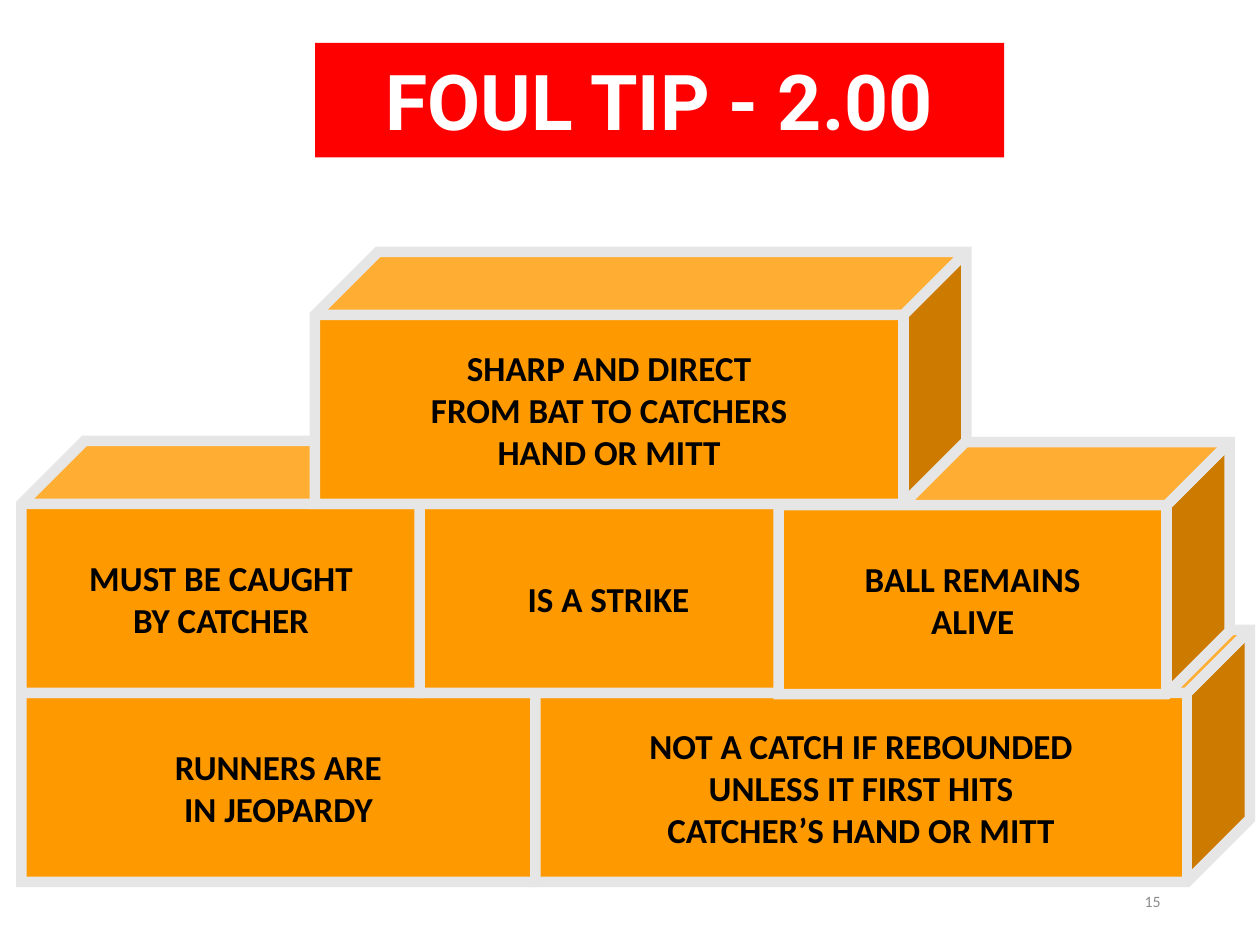
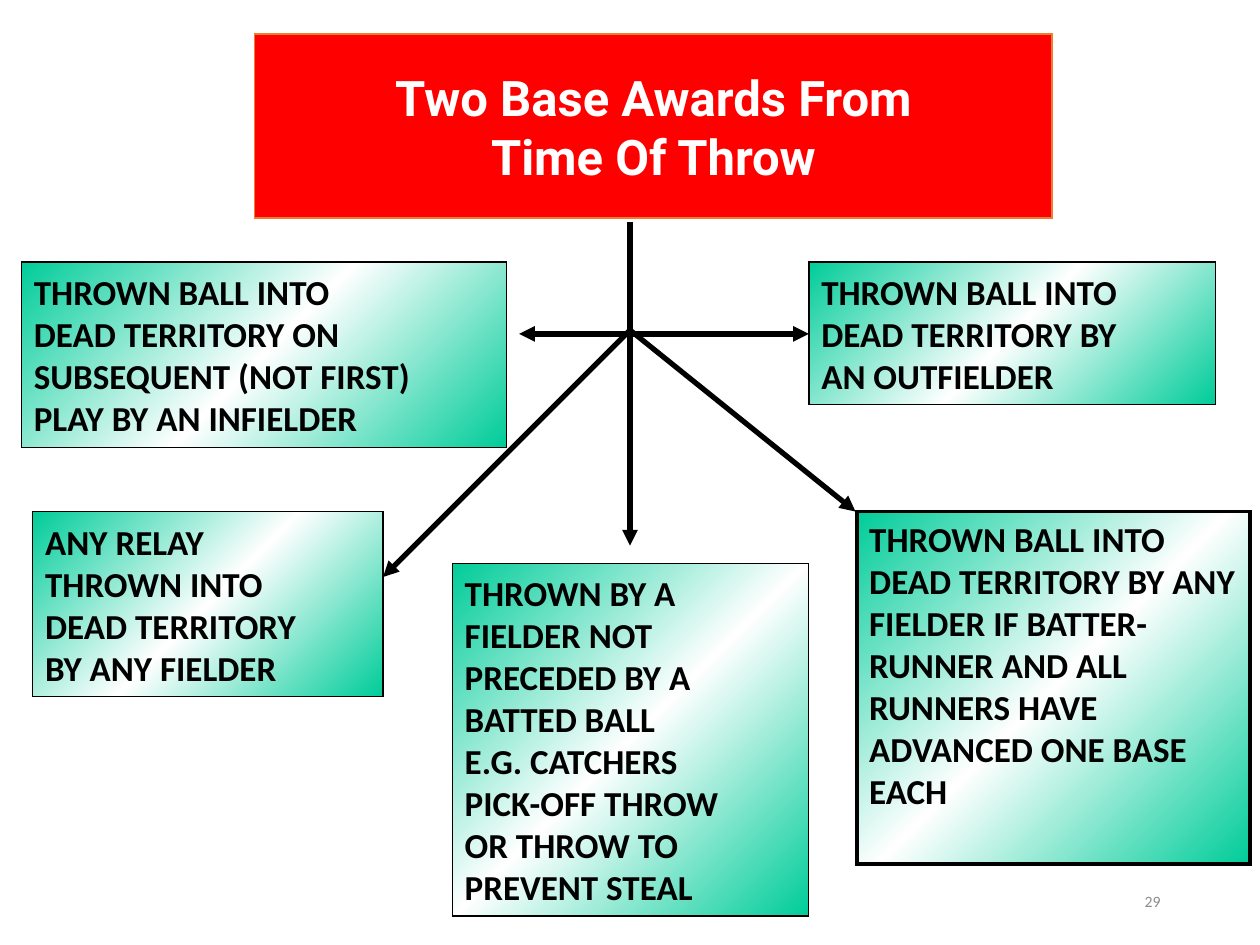
import copy

import pptx
import pptx.dml.color
import pptx.enum.shapes
import pptx.enum.text
import pptx.oxml
import pptx.oxml.ns
import pptx.util
from lxml import etree

Inches = pptx.util.Inches
Pt = pptx.util.Pt
qn = pptx.oxml.ns.qn
SHAPES = pptx.enum.shapes.MSO_SHAPE
ALIGN = pptx.enum.text.PP_ALIGN
ANCHOR = pptx.enum.text.MSO_ANCHOR
AUTO_SIZE = pptx.enum.text.MSO_AUTO_SIZE

RED, WHITE, BLACK = "FF0000", "FFFFFF", "000000"
ORANGE, MORTAR = "FF9900", "E7E6E6"
GREEN, TITLE_EDGE, NUMBER_GREY = "00CC99", "ED7D31", "8C8C8C"
TITLE_FONT, TEXT_FONT = "Roboto", "Calibri"

BRICK_HEIGHT = 2
COURSE_STEP = 1.5  # visible front of a brick; the rest is its depth

# Left and top within the wall, width, wording; from back to front
BRICKS = [
    (0, 2 * COURSE_STEP, 4.58, "RUNNERS ARE\nIN JEOPARDY"),
    (4.08, 2 * COURSE_STEP, 5.67,
     "NOT A CATCH IF REBOUNDED\nUNLESS IT FIRST HITS\nCATCHER’S HAND OR MITT"),
    (0, COURSE_STEP, 3.67, "MUST BE CAUGHT\nBY CATCHER"),
    (3.16, COURSE_STEP, 3.5, "IS A STRIKE"),
    (6.01, COURSE_STEP + 0.01, 3.58, "BALL REMAINS\nALIVE"),
    (2.33, 0, 5.17, "SHARP AND DIRECT\nFROM BAT TO CATCHERS\nHAND OR MITT"),
]

# Box within the diagram, wording
AWARDS = [
    ((0, 0.32, 3.85, 1.47),
     "THROWN BALL INTO\nDEAD TERRITORY ON\nSUBSEQUENT (NOT FIRST)\nPLAY BY AN INFIELDER"),
    ((6.25, 0.32, 3.23, 1.13),
     "THROWN BALL INTO\nDEAD TERRITORY BY\nAN OUTFIELDER"),
    ((0.09, 2.3, 2.78, 1.47),
     "ANY RELAY\nTHROWN INTO\nDEAD TERRITORY\nBY ANY FIELDER"),
    ((3.42, 2.71, 2.83, 2.8),
     "THROWN BY A\nFIELDER NOT\nPRECEDED BY A\nBATTED BALL\nE.G. CATCHERS\n"
     "PICK-OFF THROW\nOR THROW TO\nPREVENT STEAL"),
]
ADVANCED_AWARD = (
    (6.63, 2.3, 3.12, 2.8),
    "THROWN BALL INTO DEAD TERRITORY BY ANY FIELDER IF BATTER-RUNNER "
    "AND ALL RUNNERS HAVE ADVANCED ONE BASE EACH")

# Start and end within the diagram, whether both ends are pointed
HUB = (4.83, 0.86)
ARROWS = [
    ((4.83, 0), (4.83, 2.57), False),
    ((3.95, 0.89), (6.25, 0.89), True),
    (HUB, (2.87, 2.82), False),
    (HUB, (6.62, 2.3), False),
]


# Shared styling
def colour(hex_code):
    return pptx.dml.color.RGBColor.from_string(hex_code)


def inches(box):
    return [Inches(length) for length in box]


def within(origin, box):
    return inches((origin[0] + box[0], origin[1] + box[1], *box[2:]))


def write(frame, wording, size, font, hex_code, bold=True,
          align=ALIGN.CENTER, anchor=ANCHOR.MIDDLE, wrap=False):
    frame.text = wording
    frame.word_wrap = wrap
    frame.vertical_anchor = anchor
    for paragraph in frame.paragraphs:
        paragraph.alignment = align
        for run in paragraph.runs:
            run.font.size = Pt(size)
            run.font.name = font
            run.font.bold = bold
            run.font.color.rgb = colour(hex_code)


def outline(shape, hex_code, width):
    shape.line.color.rgb = colour(hex_code)
    shape.line.width = Pt(width)
    etree.SubElement(shape.line._ln, qn("a:miter"), lim="800000")


def mirror_gradient(shape, outer, middle):
    shape.fill.gradient()
    shape.fill.gradient_angle = 315
    stop_list = shape._element.spPr.find(".//" + qn("a:gsLst"))
    stop_list.append(copy.deepcopy(stop_list[0]))
    stops = zip(shape.fill.gradient_stops, (0, 0.5, 1), (outer, middle, outer))
    for stop, position, hex_code in stops:
        stop.position = position
        stop.color.rgb = colour(hex_code)


# Title banner, square unless a corner radius is given
def add_banner(slide, box, wording, size, corner=0):
    banner = slide.shapes.title
    banner.left, banner.top, banner.width, banner.height = inches(box)
    geometry = etree.SubElement(banner._element.spPr, qn("a:prstGeom"), prst="roundRect")
    adjustments = etree.SubElement(geometry, qn("a:avLst"))
    etree.SubElement(adjustments, qn("a:gd"), name="adj",
                     fmla=f"val {round(corner * 100000)}")
    banner.fill.solid()
    banner.fill.fore_color.rgb = colour(RED)
    write(banner.text_frame, wording, size, TITLE_FONT, WHITE)
    banner.text_frame.auto_size = AUTO_SIZE.NONE
    return banner


def add_page_number(slide, number):
    label = slide.shapes.add_textbox(*inches((7.06, 6.95, 2.25, 0.4)))
    write(label.text_frame, str(number), 9, TEXT_FONT, NUMBER_GREY,
          bold=False, align=ALIGN.RIGHT, wrap=True)


# Wall of bricks
def add_wall(slide, origin):
    for left, top, width, wording in BRICKS:
        brick = slide.shapes.add_shape(
            SHAPES.CUBE, *within(origin, (left, top, width, BRICK_HEIGHT)))
        brick.shadow.inherit = False
        brick.fill.solid()
        brick.fill.fore_color.rgb = colour(ORANGE)
        outline(brick, MORTAR, 6)
        write(brick.text_frame, wording, 20, TEXT_FONT, BLACK)


# Awards and the arrows that lead to them
def add_award(slide, origin, box, wording, border=0.75, **text_layout):
    award = slide.shapes.add_shape(SHAPES.RECTANGLE, *within(origin, box))
    award.shadow.inherit = False
    mirror_gradient(award, GREEN, WHITE)
    outline(award, BLACK, border)
    write(award.text_frame, wording, 20, TEXT_FONT, BLACK,
          align=ALIGN.LEFT, **text_layout)
    return award


def add_arrow(slide, origin, start, end, both_ends):
    arrow = slide.shapes.add_connector(
        pptx.enum.shapes.MSO_CONNECTOR.STRAIGHT,
        *within(origin, start), *within(origin, end))
    arrow.line.color.rgb = colour(BLACK)
    arrow.line.width = Pt(3)
    for tip in ("a:headEnd", "a:tailEnd") if both_ends else ("a:tailEnd",):
        etree.SubElement(arrow.line._ln, qn(tip), type="triangle")
    etree.SubElement(arrow._element.spPr, qn("a:effectLst"))


def add_award_diagram(slide, origin):
    for box, wording in AWARDS:
        add_award(slide, origin, box, wording)
    advanced = add_award(slide, origin, *ADVANCED_AWARD, border=2.25,
                         anchor=ANCHOR.TOP, wrap=True)
    advanced.text_frame.auto_size = AUTO_SIZE.SHAPE_TO_FIT_TEXT
    for start, end, both_ends in ARROWS:
        add_arrow(slide, origin, start, end, both_ends)


# Slides
def build_foul_tip(slide):
    add_banner(slide, (2.5, 0.34, 5.47, 0.91), "FOUL TIP - 2.00", 44)
    add_wall(slide, (0.17, 2))
    add_page_number(slide, 15)


def build_two_base_awards(slide):
    banner = add_banner(slide, (2.02, 0.27, 6.33, 1.46),
                        "Two Base Awards From\nTime Of Throw", 28, corner=0.167)
    outline(banner, TITLE_EDGE, 0.75)
    add_award_diagram(slide, (0.17, 1.76))
    add_page_number(slide, 29)


def main():
    deck = pptx.Presentation()
    deck.slide_width, deck.slide_height = Inches(10), Inches(7.5)
    title_only = deck.slide_layouts[5]
    for build in (build_foul_tip, build_two_base_awards):
        build(deck.slides.add_slide(title_only))
    deck.save("out.pptx")


if __name__ == "__main__":
    main()
